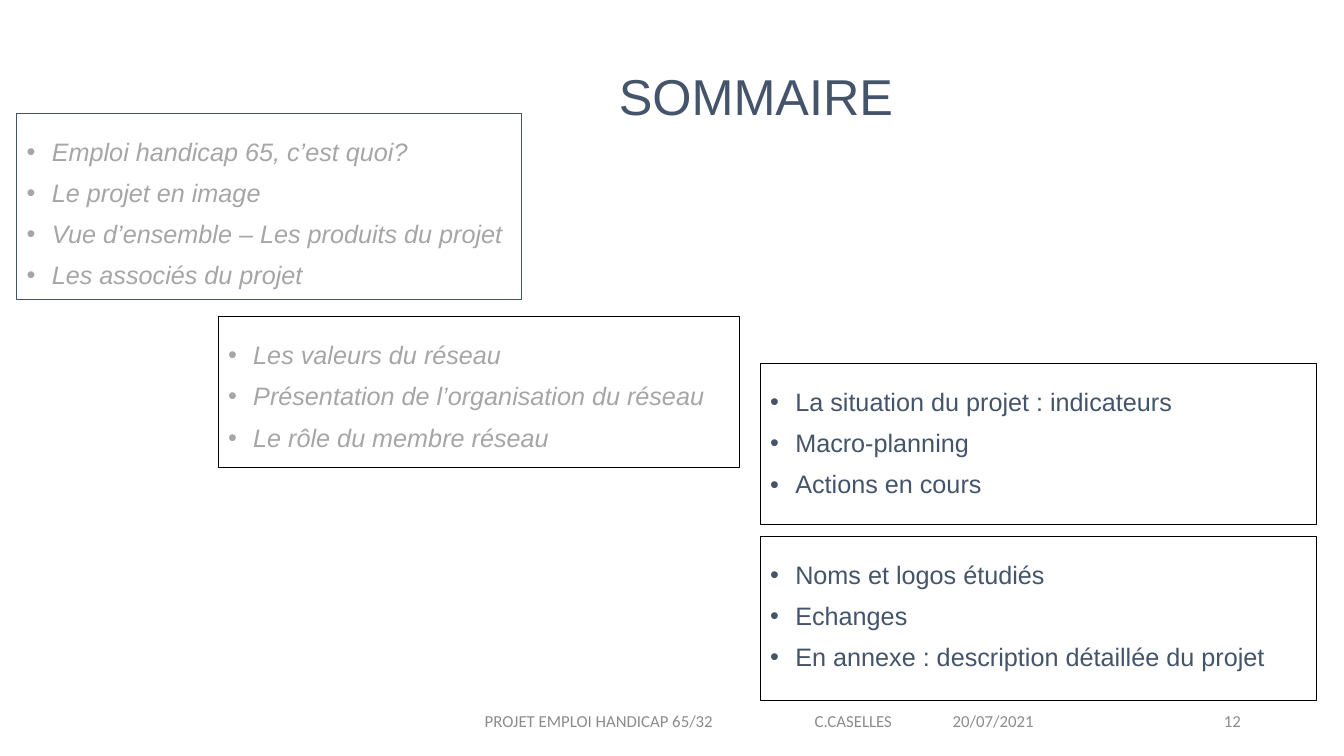
from lxml import etree
from pptx import Presentation
from pptx import util as u
from pptx.dml import color
from pptx.enum import shapes, text
from pptx.oxml import ns

SLATE, GREY, BLACK, FOOTER = "44546A", "A6A6A6", "000000", "8C8C8C"


def rgb(value):
    return color.RGBColor.from_string(value)


def write(para, content, font="Arial", size=18, ink=SLATE, italic=False):
    span = para.add_run()
    span.text = content
    span.font.name = font
    span.font.size = u.Pt(size)
    span.font.italic = italic
    span.font.color.rgb = rgb(ink)


def add_child(parent, tag, **attributes):
    child = etree.SubElement(parent, ns.qn(tag))
    for name, value in attributes.items():
        child.set(name, str(value))
    return child


class Summary:
    line_spacing = 0.9
    paragraph_gap = 10
    indent = 18

    def __init__(self, deck):
        self.page = deck.slides.add_slide(deck.slide_layouts[6])

    def label(self, content, area, align, anchor, inset=7.2, spacing=1.0, tabs=(), **style):
        box = self.page.shapes.add_textbox(*map(u.Pt, area))
        frame = box.text_frame
        frame.word_wrap = True
        frame.vertical_anchor = anchor
        frame.margin_left = u.Pt(inset)
        para = frame.paragraphs[0]
        para.alignment = align
        para.line_spacing = spacing
        if tabs:
            tab_list = add_child(para._p.get_or_add_pPr(), "a:tabLst")
            for stop in tabs:
                add_child(tab_list, "a:tab", pos=u.Pt(stop), algn="l")
        write(para, content, **style)

    def bullet_box(self, items, area, outline=BLACK, **style):
        box = self.page.shapes.add_shape(shapes.MSO_SHAPE.RECTANGLE, *map(u.Pt, area))
        box.shadow.inherit = False
        box.fill.background()
        box.line.color.rgb = rgb(outline)
        box.line.width = u.Pt(0.75)
        frame = box.text_frame
        frame.word_wrap = True
        frame.vertical_anchor = text.MSO_ANCHOR.TOP
        frame.margin_top = u.Pt(18.8)
        for index, item in enumerate(items):
            para = frame.add_paragraph() if index else frame.paragraphs[0]
            para.alignment = text.PP_ALIGN.LEFT
            para.line_spacing = self.line_spacing
            para.space_before = u.Pt(self.paragraph_gap if index else 0)
            properties = para._p.get_or_add_pPr()
            properties.set("marL", str(u.Pt(self.indent)))
            properties.set("indent", str(-u.Pt(self.indent)))
            add_child(properties, "a:buFont", typeface="Arial")
            add_child(properties, "a:buChar", char="•")
            write(para, item, **style)


def main():
    deck = Presentation()
    deck.slide_width, deck.slide_height = u.Pt(960), u.Pt(540)
    summary = Summary(deck)
    align, anchor = text.PP_ALIGN, text.MSO_ANCHOR

    summary.label("SOMMAIRE", (403.9, 36.7, 272.2, 56.9), align.CENTER, anchor.BOTTOM,
                  spacing=0.9, size=36)

    covered = {"ink": GREY, "italic": True}
    summary.bullet_box(
        ["Emploi handicap 65, c’est quoi?", "Le projet en image",
         "Vue d’ensemble – Les produits du projet", "Les associés du projet"],
        (12, 80.8, 360.5, 133), outline=SLATE, **covered)
    summary.bullet_box(
        ["Les valeurs du réseau", "Présentation de l’organisation du réseau",
         "Le rôle du membre réseau"],
        (155.8, 226.1, 372.4, 107.8), **covered)
    summary.bullet_box(
        ["La situation du projet : indicateurs", "Macro-planning", "Actions en cours"],
        (543, 259.6, 397.4, 114.8))
    summary.bullet_box(
        ["Noms et logos étudiés", "Echanges", "En annexe : description détaillée du projet"],
        (543, 383, 397.4, 117.3))

    footer = {"font": "Calibri", "size": 12, "ink": FOOTER}
    summary.label("PROJET EMPLOI HANDICAP 65/32\tC.CASELLES\t20/07/2021",
                  (318.2, 500.4, 450, 28.8), align.LEFT, anchor.MIDDLE,
                  inset=28, tabs=(235.7, 334.3), **footer)
    summary.label("12", (792.7, 500.4, 100.8, 28.8), align.RIGHT, anchor.MIDDLE, **footer)

    deck.save("out.pptx")


if __name__ == "__main__":
    main()
